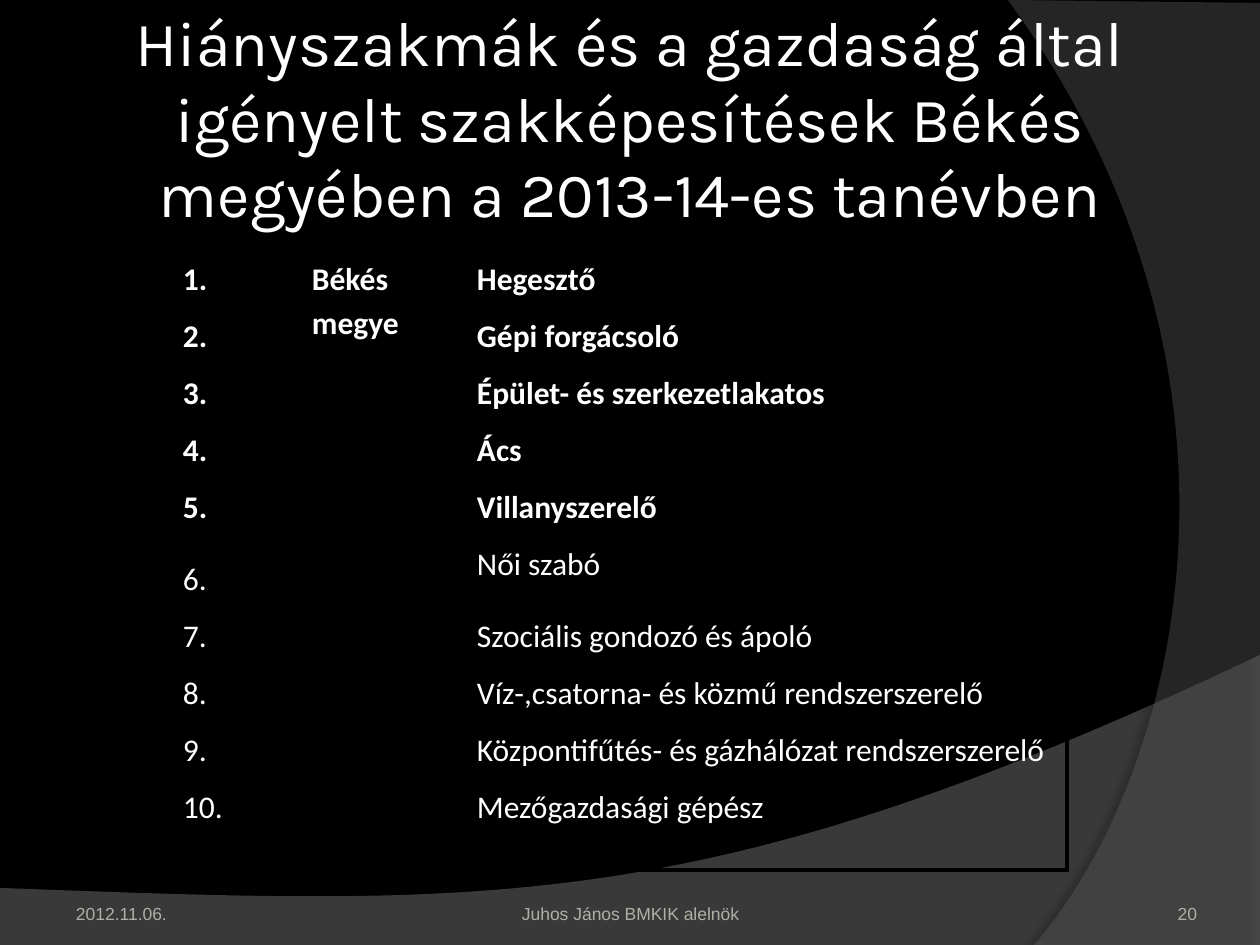
from lxml import etree
from pptx import Presentation
from pptx import util as u
from pptx.dml.color import RGBColor
from pptx.enum import text
from pptx.oxml import ns

SCALE = 914400 / 126
TRADES = ["Hegesztő", "Gépi forgácsoló", "Épület- és szerkezetlakatos", "Ács",
          "Villanyszerelő", "Női szabó", "Szociális gondozó és ápoló",
          "Víz-,csatorna- és közmű rendszerszerelő",
          "Központifűtés- és gázhálózat rendszerszerelő", "Mezőgazdasági gépész"]
BOLD_RANKS = 5
NO_STYLE = "{2D5ABB26-0587-4C30-8999-92F81FD0307C}"


def px(length):
    """Turn px into EMU."""
    return u.Emu(round(length * SCALE))


def colour(value):
    """Turn a hex string into a colour."""
    return RGBColor.from_string(value)


def child(parent, tag, **attributes):
    """Append a DrawingML element."""
    element = etree.SubElement(parent, ns.qn(tag))
    for name, value in attributes.items():
        element.set(name, str(value))
    return element


def style(paragraph, font, size, hex_value, bold=False):
    """Format every run of a paragraph."""
    for run in paragraph.runs:
        run.font.name = font
        run.font.size = u.Pt(size)
        run.font.bold = bold
        run.font.color.rgb = colour(hex_value)


def bezier(start, first, second, end, steps=60):
    """Return points along a cubic curve."""
    points = []
    for step in range(1, steps + 1):
        t = step / steps
        weights = ((1 - t) ** 3, 3 * t * (1 - t) ** 2, 3 * t * t * (1 - t), t ** 3)
        points.append(tuple(sum(w * p[axis] for w, p in zip(weights, (start, first, second, end)))
                            for axis in (0, 1)))
    return points


def add_wave(slide, box, outline, fill, opacity, shadow_opacity, distance, angle):
    """Draw a translucent background wave within a box."""
    left, top = box
    points = [(px(left + x), px(top + y)) for x, y in outline]
    builder = slide.shapes.build_freeform(*points[0])
    builder.add_line_segments(points[1:], close=True)
    wave = builder.convert_to_shape()
    wave.shadow.inherit = False
    wave.fill.solid()
    wave.fill.fore_color.rgb = colour(fill)
    wave.line.fill.background()
    properties = wave.element.spPr
    child(properties.find(".//" + ns.qn("a:srgbClr")), "a:alpha", val=opacity * 1000)
    effects = properties.find(ns.qn("a:effectLst"))
    shadow = child(effects, "a:outerShdw", blurRad=u.Pt(4), dist=u.Pt(distance),
                   dir=angle * 60000, algn="ctr", rotWithShape=0)
    child(child(shadow, "a:srgbClr", val="000000"), "a:alpha", val=shadow_opacity * 1000)


def add_background(slide, box):
    """Fill the slide with black and draw both waves."""
    left, top, width, height = box
    slide.background.fill.solid()
    slide.background.fill.fore_color.rgb = colour("000000")
    floor = [(0, 888), (0, height), (width, height), (width, 655)]
    floor += bezier(floor[-1], (704, 919), (493, 906), floor[0])
    add_wave(slide, (left, top), floor, "7F7F7F", 45, 35, 3.5, 270)
    side = [(width, 3), (width, height), (1034, height)]
    side += bezier(side[-1], (1178, 780), (1283, 378), (1008, 0))
    add_wave(slide, (left, top), side, "5E5E5E", 40, 45, 4, 180)


def add_label(slide, box, words, font, size, hex_value, align, anchor, insets):
    """Place one wrapped paragraph in a box."""
    frame = slide.shapes.add_textbox(*map(px, box)).text_frame
    frame.word_wrap = True
    frame.vertical_anchor = anchor
    frame.margin_left, frame.margin_top, frame.margin_right, frame.margin_bottom = map(px, insets)
    frame.text = words
    frame.paragraphs[0].alignment = align
    style(frame.paragraphs[0], font, size, hex_value)


def fill_cell(cell, words, bold):
    """Write one table entry."""
    cell.text = words
    paragraph = cell.text_frame.paragraphs[0]
    paragraph.line_spacing = 1.15
    paragraph.space_after = u.Pt(10)
    style(paragraph, "Calibri", 18, "FFFFFF", bold)


def format_cell(cell, edges):
    """Set margins, outer borders and an empty fill."""
    cell.margin_left = cell.margin_right = px(9)
    cell.margin_top = cell.margin_bottom = 0
    for side, is_outer in edges.items():
        line = child(cell._tc.get_or_add_tcPr(), "a:ln" + side, w=u.Pt(2.5))
        if is_outer:
            child(child(line, "a:solidFill"), "a:srgbClr", val="000000")
        else:
            child(line, "a:noFill")
    cell.fill.background()


def add_trades(slide, box):
    """Build the ranked table of trades with its merged county column."""
    left, top, width, height = box
    heights = [57] * 5 + [15] + [57] * 5
    widths = [129, 165, width - 294]
    last_row, last_column = len(heights) - 1, len(widths) - 1
    table = slide.shapes.add_table(len(heights), len(widths), *map(px, box)).table
    table.first_row = table.horz_banding = False
    table._tbl.tblPr.find(ns.qn("a:tableStyleId")).text = NO_STYLE
    for column, size in zip(table.columns, widths):
        column.width = px(size)
    for row, size in zip(table.rows, heights):
        row.height = px(size)
    for r in range(last_row + 1):
        for c in range(last_column + 1):
            format_cell(table.cell(r, c), {"L": c == 0, "R": c == last_column,
                                           "T": r == 0, "B": r == last_row})
    for first, last in (((0, 1), (last_row, 1)), ((4, 0), (5, 0)), ((5, 2), (6, 2))):
        table.cell(*first).merge(table.cell(*last))
    fill_cell(table.cell(0, 1), "Békés megye", True)
    for rank, trade in enumerate(TRADES, 1):
        bold = rank <= BOLD_RANKS
        rank_row = rank - 1 if bold else rank
        trade_row = rank - 1 if rank <= BOLD_RANKS + 1 else rank
        fill_cell(table.cell(rank_row, 0), f"{rank}.", bold)
        fill_cell(table.cell(trade_row, 2), trade, bold)


def add_footer(slide, box):
    """Place date, speaker and page number along the bottom."""
    left, top, width, height = box
    align = text.PP_ALIGN
    parts = [(0, 294, "2012.11.06.", align.LEFT, (13, 6, 13, 0)),
             (368, 399, "Juhos János BMKIK alelnök", align.CENTER, (0, 6, 0, 0)),
             (width - 294, 294, "20", align.RIGHT, (0, 0, 0, 0))]
    for offset, part_width, words, alignment, insets in parts:
        add_label(slide, (left + offset, top, part_width, height), words, "Arial", 10,
                  "B0AFA6", alignment, text.MSO_ANCHOR.BOTTOM, insets)


def main():
    """Build and save the slide."""
    deck = Presentation()
    deck.slide_width, deck.slide_height = px(1260), px(945)
    slide = deck.slides.add_slide(deck.slide_layouts[6])
    add_background(slide, (0, 0, 1260, 945))
    add_label(slide, (63, 38, 1134, 158),
              "Hiányszakmák és a gazdaság által igényelt szakképesítések Békés "
              "megyében a 2013-14-es tanévben", "Karla", 36, "FFFFFF",
              text.PP_ALIGN.CENTER, text.MSO_ANCHOR.MIDDLE, (6, 6, 6, 6))
    add_trades(slide, (174, 255, 893, 585))
    add_footer(slide, (63, 861, 1134, 63))
    deck.save("out.pptx")


if __name__ == "__main__":
    main()
